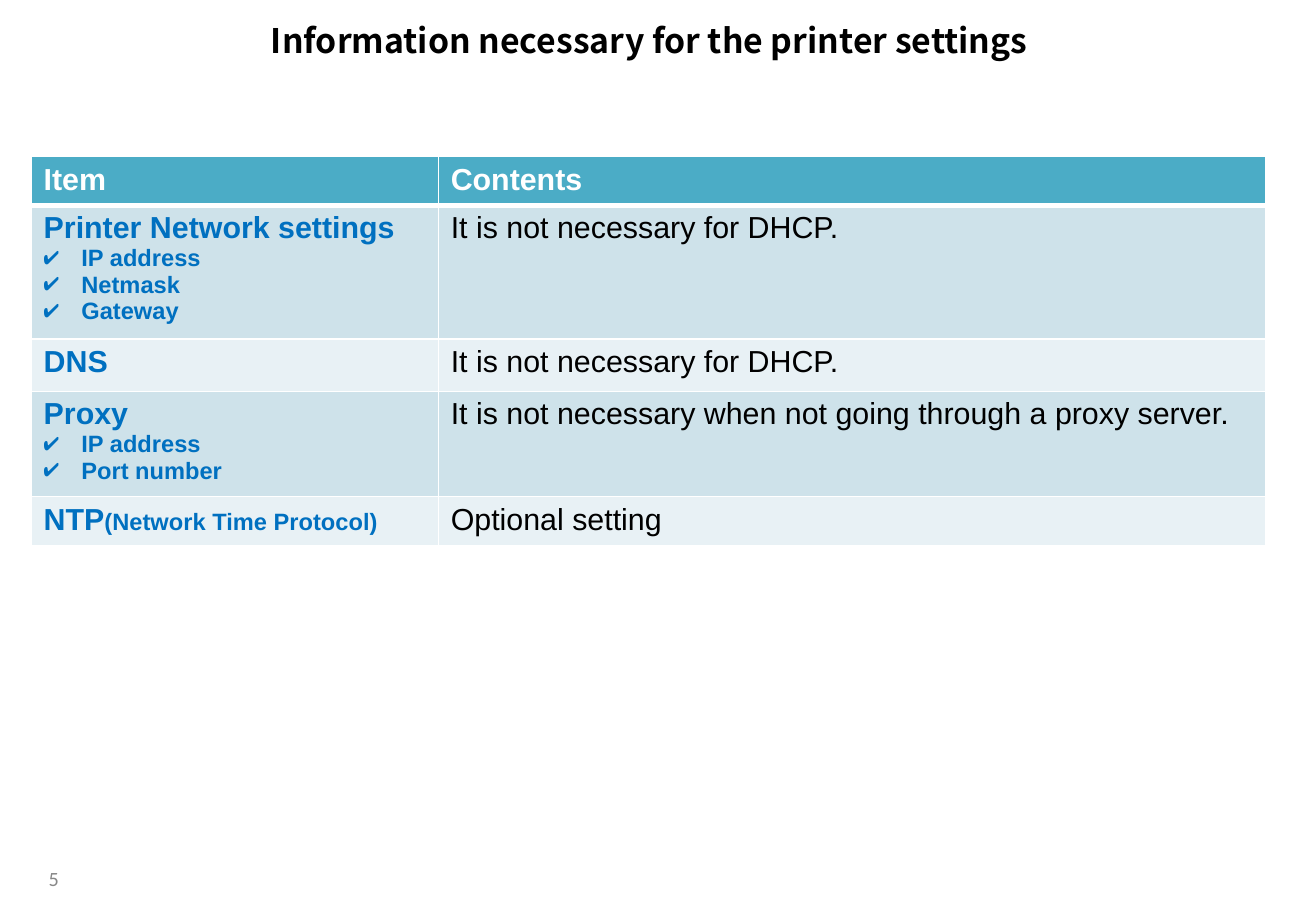
from lxml import etree
from pptx import Presentation
from pptx.dml.color import RGBColor
from pptx.enum.text import MSO_ANCHOR, PP_ALIGN
from pptx.oxml import parse_xml
from pptx.oxml.ns import nsdecls, qn
from pptx.util import Inches, Pt

MIDDLE, BOTTOM = MSO_ANCHOR.MIDDLE, MSO_ANCHOR.BOTTOM
CENTER = PP_ALIGN.CENTER
WHITE = RGBColor(0xFF, 0xFF, 0xFF)
BLACK = RGBColor(0, 0, 0)
GRAY = RGBColor(0x88, 0x88, 0x88)
BLUE = RGBColor(0x00, 0x70, 0xC0)
TEAL = RGBColor(0x4B, 0xAC, 0xC6)
BANDS = [RGBColor(0xCE, 0xE2, 0xEA), RGBColor(0xE8, 0xF1, 0xF5)]

# Item, small text beside it, checked points, contents, row height
ROWS = [
    ("Item", "", [], "Contents", 0.4),
    ("Printer Network settings", "", ["IP address", "Netmask", "Gateway"],
     "It is not necessary for DHCP.", 1.03),
    ("DNS", "", [], "It is not necessary for DHCP.", 0.43),
    ("Proxy", "", ["IP address", "Port number"],
     "It is not necessary when not going through a proxy server.", 0.81),
    ("NTP", "(Network Time Protocol)", [], "Optional setting", 0.4),
]


def style(font, size, color, bold=False, name="Arial"):
    font.name, font.size, font.bold = name, Pt(size), bold
    font.color.rgb = color


def place(shape, left, top, width, height, anchor):
    shape.left, shape.top = Inches(left), Inches(top)
    shape.width, shape.height = Inches(width), Inches(height)
    frame = shape.text_frame
    frame.margin_left = frame.margin_right = 0
    frame.margin_top = frame.margin_bottom = 0
    frame.vertical_anchor = anchor
    frame.word_wrap = True
    return frame.paragraphs[0]


prs = Presentation()
prs.slide_width, prs.slide_height = Inches(10.83), Inches(7.5)
slide = prs.slides.add_slide(prs.slide_layouts[5])

# Title
para = place(slide.shapes.title, 0.4, 0.14, 9.89, 0.38, MIDDLE)
para.text = "Information necessary for the printer settings"
para.alignment = CENTER
style(para.font, 20, BLACK, True, "Noto Sans CJK JP")

# Page number
box = slide.shapes.add_textbox(0, 0, 0, 0)
para = place(box, 0.4, 7.02, 2.53, 0.31, BOTTOM)
para.text = "5"
style(para.font, 12, GRAY, name="Calibri")

# Table
table = slide.shapes.add_table(
    len(ROWS), 2, Inches(0.26), Inches(1.29), Inches(10.16), Inches(3.07)).table
table.columns[0].width = Inches(3.35)
table.columns[1].width = Inches(6.81)

for row, (item, note, points, text, height) in enumerate(ROWS):
    table.rows[row].height = Inches(height)
    head = row == 0
    left, right = table.cell(row, 0), table.cell(row, 1)

    # Borders and fill
    for cell in (left, right):
        props = cell._tc.get_or_add_tcPr()
        for side in "LRTB":
            thick = (head and side == "B") or (row == 1 and side == "T")
            props.append(parse_xml(
                f'<a:ln{side} {nsdecls("a")} w="{Pt(3 if thick else 1)}">'
                f'<a:solidFill><a:srgbClr val="{WHITE}"/></a:solidFill>'
                f'</a:ln{side}>'))
        cell.fill.solid()
        cell.fill.fore_color.rgb = TEAL if head else BANDS[(row - 1) % 2]

    # Item with its note
    color = WHITE if head else BLUE
    para = left.text_frame.paragraphs[0]
    if note:
        for part, size in ((item, 18), (note, 14)):
            run = para.add_run()
            run.text = part
            style(run.font, size, color, True)
    else:
        para.text = item
        style(para.font, 18, color, True)

    # Checked points
    for point in points:
        para = left.text_frame.add_paragraph()
        para.text = point
        props = para._p.get_or_add_pPr()
        props.set("marL", str(Inches(0.31)))
        props.set("indent", str(-Inches(0.31)))
        tint = etree.SubElement(props, qn("a:buClr"))
        etree.SubElement(tint, qn("a:srgbClr"), val=str(BLUE))
        etree.SubElement(props, qn("a:buChar"), char="✔")
        style(para.font, 14, BLUE, True)

    # Contents
    para = right.text_frame.paragraphs[0]
    para.text = text
    style(para.font, 18, WHITE if head else BLACK, head)

prs.save("out.pptx")
